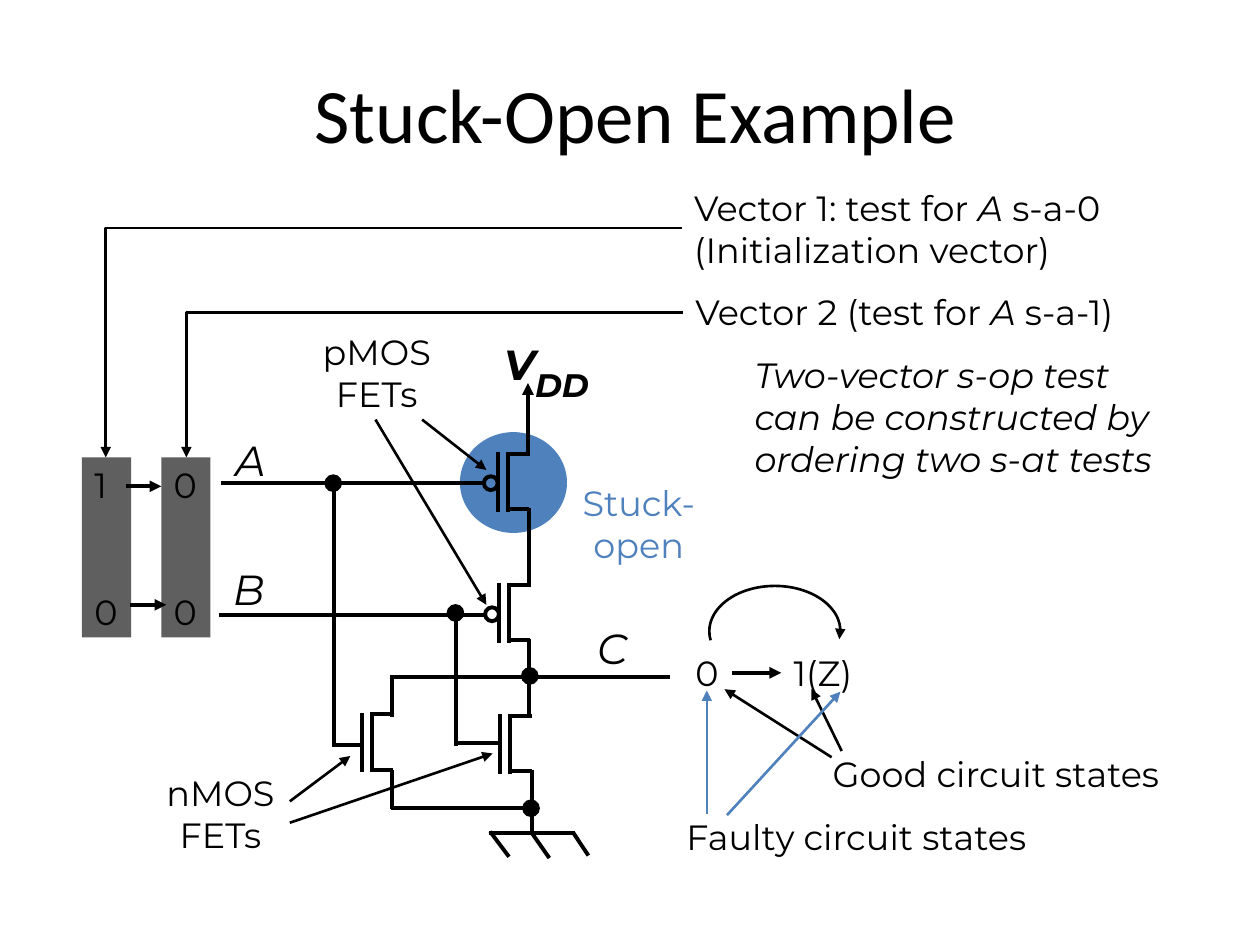
from typing import NamedTuple

from lxml.etree import SubElement
from pptx import Presentation
from pptx.dml.color import RGBColor
from pptx.enum.shapes import MSO_CONNECTOR, MSO_SHAPE
from pptx.enum.text import MSO_ANCHOR, MSO_AUTO_SIZE, PP_ALIGN
from pptx.oxml.ns import qn
from pptx.util import Pt

BLACK = RGBColor(0x00, 0x00, 0x00)
BLUE = RGBColor(0x4F, 0x81, 0xBD)
GRAY = RGBColor(0x5F, 0x5F, 0x5F)
COLS, ROWS = 100, 75
THICK, THIN = 2.25, 1.5

deck = Presentation()
deck.slide_width, deck.slide_height = Pt(720), Pt(540)
CELL = deck.slide_width // COLS
page = deck.slides.add_slide(deck.slide_layouts[6])


class Box(NamedTuple):
    """Left, top, width and height in grid cells."""
    x: float
    y: float
    w: float
    h: float


class Wire(NamedTuple):
    """Two end points in grid cells."""
    x1: float
    y1: float
    x2: float
    y2: float


class Label(NamedTuple):
    text: str
    box: Box
    style: dict = {}


class Fet(NamedTuple):
    """Top of the gate bar; a bubble marks a pMOS."""
    x: float
    y: float
    bubble: bool


def cells(values: tuple) -> list[int]:
    return [round(v * CELL) for v in values]


def arrow(shape, end: str = "tailEnd") -> None:
    SubElement(shape.line._get_or_add_ln(), qn(f"a:{end}"), type="triangle")


def link(wire: Wire, width: float = THICK, color: RGBColor = BLACK,
         end: str = "", bent: bool = False) -> None:
    kind = MSO_CONNECTOR.ELBOW if bent else MSO_CONNECTOR.STRAIGHT
    line = page.shapes.add_connector(kind, *cells(wire))
    line.line.width, line.line.color.rgb = Pt(width), color
    props = line._element.spPr
    if bent:
        props.find(qn("a:prstGeom")).set("prst", "bentConnector2")
    if end:
        arrow(line, end)
    SubElement(props, qn("a:effectLst"))


def form(kind: MSO_SHAPE, box: Box, fill: RGBColor | None = None,
         width: float = 0):
    shape = page.shapes.add_shape(kind, *cells(box))
    shape.shadow.inherit = False
    if fill is None:
        shape.fill.background()
    else:
        shape.fill.solid()
        shape.fill.fore_color.rgb = fill
    if width:
        shape.line.width, shape.line.color.rgb = Pt(width), BLACK
    else:
        shape.line.fill.background()
    return shape


def write(shape, text: str, size: float = 20, font: str = "Montserrat",
          color: RGBColor = BLACK, bold: bool = False, slant: bool = False,
          mid: bool = False, wrap: bool = False, grow: bool = True,
          anchor: MSO_ANCHOR = MSO_ANCHOR.TOP, gap: float = 0,
          sub: str = "") -> None:
    """Fill a shape; stars enclose italics, sub is a larger subscript."""
    frame = shape.text_frame
    frame.word_wrap, frame.vertical_anchor = wrap, anchor
    frame.auto_size = MSO_AUTO_SIZE.SHAPE_TO_FIT_TEXT if grow else MSO_AUTO_SIZE.NONE
    for i, row in enumerate(text.split("\n")):
        para = frame.add_paragraph() if i else frame.paragraphs[0]
        para.alignment = PP_ALIGN.CENTER if mid else PP_ALIGN.LEFT
        para.space_before = Pt(gap if i else 0)
        parts = [(s, size, slant or k % 2 == 1) for k, s in enumerate(row.split("*"))]
        if sub:
            parts.append((sub, 32, slant))
        for word, high, lean in parts:
            run = para.add_run()
            run.text = word
            run.font.name, run.font.size = font, Pt(high)
            run.font.bold, run.font.italic = bold, lean
            run.font.color.rgb = color
    if sub:
        run.font._element.set("baseline", "-30000")


def label(item: Label) -> None:
    write(page.shapes.add_textbox(*cells(item.box)), item.text, **item.style)


def dot(x: float, y: float) -> None:
    form(MSO_SHAPE.OVAL, Box(x - 0.65, y - 0.65, 1.3, 1.3), BLACK, 0.75)


def draw(fet: Fet) -> None:
    x, y = fet.x, fet.y
    for bar in (x, x + 0.8):
        link(Wire(bar, y, bar, y + 4.7))
    for stub in (y + 0.1, y + 4.5):
        link(Wire(x + 2.5, stub, x + 0.7, stub))
    if fet.bubble:
        form(MSO_SHAPE.OVAL, Box(x - 1.1, y + 1.9, 1.1, 1.1), width=THICK)


def vector(x: float, text: str) -> None:
    bar = form(MSO_SHAPE.RECTANGLE, Box(x, 36.3, 3.9, 14.3), GRAY)
    write(bar, text, gap=48.8)


ITALIC = {"slant": True}
NODE = {"slant": True, "size": 24}
MID = {"mid": True}
LABELS = [
    Label("Stuck-Open Example", Box(3.2, 2.5, 94.5, 12.9),
          {"size": 44, "font": "Calibri", "mid": True, "wrap": True,
           "grow": False, "anchor": MSO_ANCHOR.MIDDLE}),
    Label("Two-vector s-op test\ncan be constructed by\nordering two s-at tests",
          Box(58.9, 27.6, 36.6, 11), ITALIC),
    Label("A", Box(17.7, 34, 5.7, 5), NODE),
    Label("B", Box(17.5, 44.2, 5.7, 5), NODE),
    Label("C", Box(46.4, 48.9, 5.7, 5), NODE),
    Label("V", Box(39, 25.3, 10.2, 5), {**NODE, "bold": True, "wrap": True, "sub": "DD"}),
    Label("pMOS\nFETs", Box(24.5, 25.7, 10.8, 7.7), MID),
    Label("nMOS\nFETs", Box(12.1, 60.7, 10.8, 7.7), MID),
    Label("Stuck-\nopen", Box(44.8, 37.7, 11.8, 7.7), {**MID, "color": BLUE}),
    Label("0", Box(54.2, 51.2, 3.9, 4.3)),
    Label("1(Z)", Box(62, 51.2, 8, 4.3)),
    Label("Good circuit states", Box(65.1, 59.2, 31.2, 4.3)),
    Label("Faulty circuit states", Box(53.5, 64.2, 32.7, 4.3)),
    Label("Vector 1: test for *A* s-a-0\n(Initialization vector)",
          Box(54.1, 14.3, 39.2, 7.7)),
    Label("Vector 2 (test for *A* s-a-1)", Box(54.2, 22.6, 40.4, 4.3)),
]
FETS = [Fet(39.5, 35.9, True), Fet(39.6, 46.3, True),
        Fet(39.7, 56.7, False), Fet(28.7, 56.6, False)]
WIRES = [
    Wire(38.5, 38.3, 17.5, 38.3), Wire(38.5, 48.8, 17.4, 48.8),
    Wire(26.5, 38.5, 26.5, 59.3), Wire(28.7, 59.1, 26.4, 59.1),
    Wire(36.2, 48.9, 36.2, 59.2), Wire(39.6, 59, 36.1, 59),
    Wire(42, 40.3, 42, 46.6), Wire(42, 50.7, 42, 57),
    Wire(42.2, 61.1, 42.2, 66.1),
    Wire(31, 53.7, 53.2, 53.7), Wire(31, 64.1, 41.7, 64.1),
    Wire(31.1, 53.6, 31.1, 56.9), Wire(31.1, 61.1, 31.1, 64.2),
    Wire(38.8, 66.1, 45.6, 66.1), Wire(38.9, 66, 40.4, 68),
    Wire(42.2, 66.1, 43.6, 68.1), Wire(45.5, 66.1, 46.7, 67.9),
]
DOTS = [(26.45, 38.35), (42.05, 53.65), (42.15, 64.15), (36.15, 48.65)]
STEPS = [Wire(10, 38.6, 12.8, 38.6), Wire(10.3, 48, 13.2, 48),
         Wire(58.1, 53.4, 62, 53.4)]
HINTS = [
    Wire(23, 63.6, 27.8, 60), Wire(23, 65.3, 39.1, 59.8),
    Wire(29.8, 33.3, 38.6, 48), Wire(33.5, 33.3, 38.6, 37.3),
    Wire(66, 60.1, 57.5, 54.7), Wire(66.8, 59.6, 64.4, 54.7),
]
FAULTS = [Wire(56.1, 64.6, 56.1, 54.8), Wire(57.7, 64.7, 66.7, 54.9)]
BENDS = [Wire(54.1, 18.1, 8.4, 36.3), Wire(54.2, 24.8, 14.8, 36.3)]


def main() -> None:
    form(MSO_SHAPE.OVAL, Box(36.5, 34.3, 8.5, 8), BLUE)
    for wire in WIRES:
        link(wire)
    link(Wire(41.9, 30.4, 41.9, 36.2), end="headEnd")
    for fet in FETS:
        draw(fet)
    for spot in DOTS:
        dot(*spot)
    vector(6.5, "1\n0")
    vector(12.8, "0\n0")
    for item in LABELS:
        label(item)
    for wire in STEPS:
        link(wire, end="tailEnd")
    for wire in HINTS:
        link(wire, THIN, end="tailEnd")
    for wire in FAULTS:
        link(wire, THIN, BLUE, "tailEnd")
    for wire in BENDS:
        link(wire, THIN, end="tailEnd", bent=True)
    arc = form(MSO_SHAPE.ARC, Box(56.3, 46.5, 10.4, 7.2), width=THIN)
    for i, angle in enumerate((172, 7)):
        arc.adjustments[i] = angle * 0.6
    arrow(arc)
    deck.save("out.pptx")


if __name__ == "__main__":
    main()
